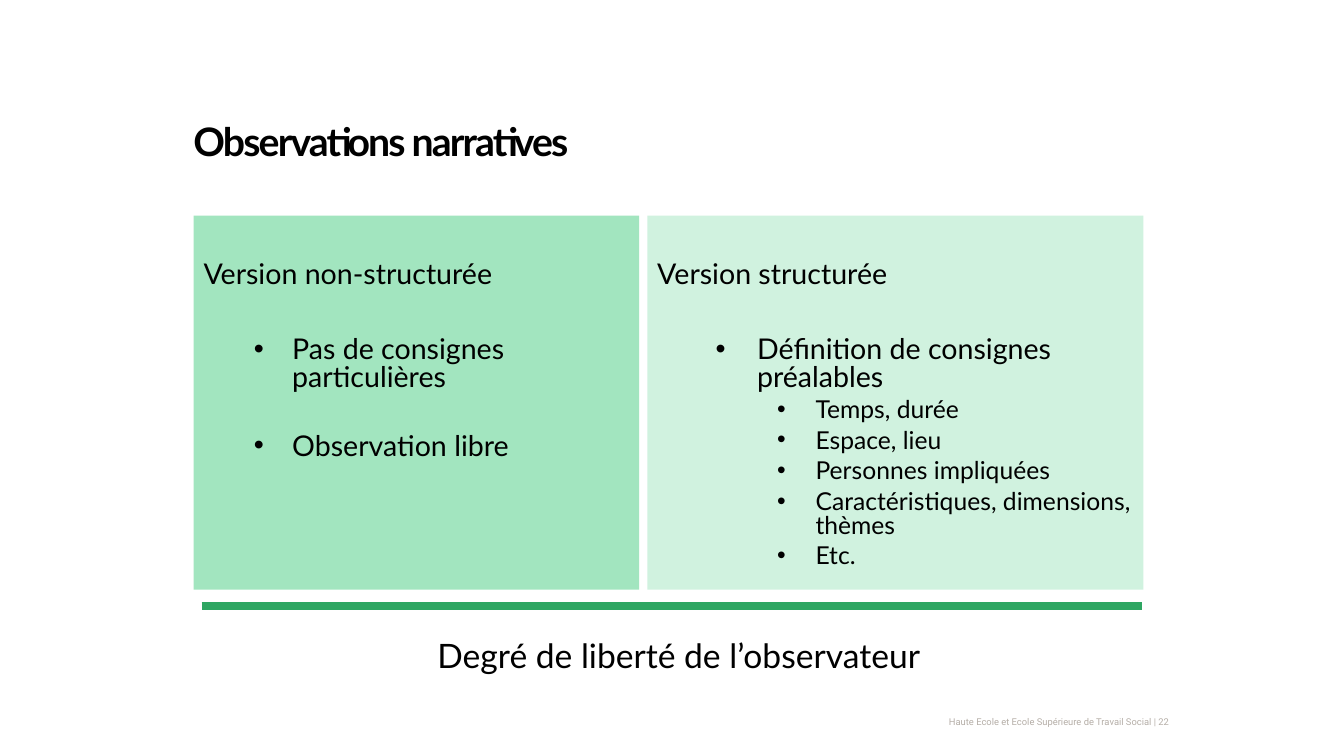
from dataclasses import dataclass

from lxml.etree import SubElement
from pptx import Presentation
from pptx.dml.color import RGBColor
from pptx.enum.shapes import MSO_CONNECTOR as Connector, MSO_SHAPE as Preset
from pptx.enum.text import MSO_ANCHOR as Anchor, PP_ALIGN as Align
from pptx.oxml.ns import qn
from pptx.util import Inches, Pt

BLACK = "000000"
PANEL_TOP, PANEL_HEIGHT = 2.14, 3.71


@dataclass
class Line:
    text: str
    size: float = 20.4
    before: float = 0
    level: int = 0
    indent: float = 0
    hanging: float = 0


@dataclass
class Panel:
    left: float
    width: float
    fill: str
    lines: list[Line]


@dataclass
class Caption:
    text: str
    box: tuple[float, float, float, float]
    font: dict
    color: str = BLACK
    paragraph: dict | None = None
    frame: dict | None = None
    tracking: int = 0


def rgb(value: str) -> RGBColor:
    return RGBColor.from_string(value)


def apply(target, values: dict | None) -> None:
    for name, value in (values or {}).items():
        setattr(target, name, value)


def add_bullet(paragraph, line: Line) -> None:
    properties = paragraph._p.get_or_add_pPr()
    properties.set("marL", str(Inches(line.indent)))
    properties.set("indent", str(-Inches(line.hanging)))
    SubElement(properties, qn("a:buFont"), typeface="Arial")
    SubElement(properties, qn("a:buChar"), char="•")


def draw_panel(slide, panel: Panel) -> None:
    card = slide.shapes.add_shape(
        Preset.RECTANGLE, Inches(panel.left), Inches(PANEL_TOP),
        Inches(panel.width), Inches(PANEL_HEIGHT))
    card.shadow.inherit = False
    card.fill.solid()
    card.fill.fore_color.rgb = rgb(panel.fill)
    card.line.fill.background()
    frame = card.text_frame
    apply(frame, {"word_wrap": True, "vertical_anchor": Anchor.TOP,
                  "margin_top": Inches(0.46)})
    for index, line in enumerate(panel.lines):
        paragraph = frame.add_paragraph() if index else frame.paragraphs[0]
        apply(paragraph, {"level": line.level, "alignment": Align.LEFT,
                          "line_spacing": 0.8, "space_before": Pt(line.before)})
        if line.level:
            add_bullet(paragraph, line)
        run = paragraph.add_run()
        run.text = line.text
        apply(run.font, {"name": "Lato", "size": Pt(line.size)})
        run.font.color.rgb = rgb(BLACK)


def draw_caption(slide, caption: Caption) -> None:
    frame = slide.shapes.add_textbox(*map(Inches, caption.box)).text_frame
    apply(frame, {"word_wrap": True} | (caption.frame or {}))
    paragraph = frame.paragraphs[0]
    apply(paragraph, caption.paragraph)
    run = paragraph.add_run()
    run.text = caption.text
    apply(run.font, caption.font)
    run.font.color.rgb = rgb(caption.color)
    if caption.tracking:
        run.font._element.set("spc", str(caption.tracking))


def draw_freedom_bar(slide) -> None:
    bar = slide.shapes.add_connector(
        Connector.STRAIGHT, Inches(2), Inches(6.01), Inches(11.33), Inches(6.01))
    bar.line.color.rgb = rgb("2EA662")
    bar.line.width = Pt(6)
    SubElement(bar._element.spPr, qn("a:effectLst"))


INSTRUCTIONS = ["Temps, durée", "Espace, lieu", "Personnes impliquées",
                "Caractéristiques, dimensions, thèmes", "Etc."]

PANELS = [
    Panel(1.92, 4.42, "A2E5BF", [
        Line("Version non-structurée"),
        Line("Pas de consignes particulières", 20.4, 34.6, 1, 0.88, 0.38),
        Line("Observation libre", 20.4, 29.6, 1, 0.88, 0.38),
    ]),
    Panel(6.42, 4.92, "D0F2DF", [
        Line("Version structurée"),
        Line("Définition de consignes préalables", 20.4, 34.6, 1, 0.99, 0.41),
        *(Line(text, 17.6, 5, 2, 1.57, 0.38) for text in INSTRUCTIONS),
    ]),
]

CAPTIONS = [
    Caption("Haute Ecole et Ecole Supérieure de Travail Social | 22",
            (8.44, 7.1, 3.29, 0.14), {"name": "Roboto", "size": Pt(6.7)}, "B5AEA7",
            {"alignment": Align.RIGHT, "line_spacing": Pt(7)},
            {"vertical_anchor": Anchor.MIDDLE,
             "margin_left": Inches(0.13), "margin_right": Inches(0.13),
             "margin_top": Inches(0.07), "margin_bottom": Inches(0.07)}),
    Caption("Observations narratives", (1.82, 1.11, 5.58, 0.75),
            {"name": "Lato", "size": Pt(28), "bold": True}, tracking=-130),
    Caption("Degré de liberté de l’observateur", (4.24, 6.25, 5.09, 0.5),
            {"name": "Lato", "size": Pt(24)}, frame={"word_wrap": False}),
]


def main() -> None:
    deck = Presentation()
    apply(deck, {"slide_width": Inches(13.33), "slide_height": Inches(7.5)})
    slide = deck.slides.add_slide(deck.slide_layouts[6])
    for panel in PANELS:
        draw_panel(slide, panel)
    draw_freedom_bar(slide)
    for caption in CAPTIONS:
        draw_caption(slide, caption)
    deck.save("out.pptx")


if __name__ == "__main__":
    main()
